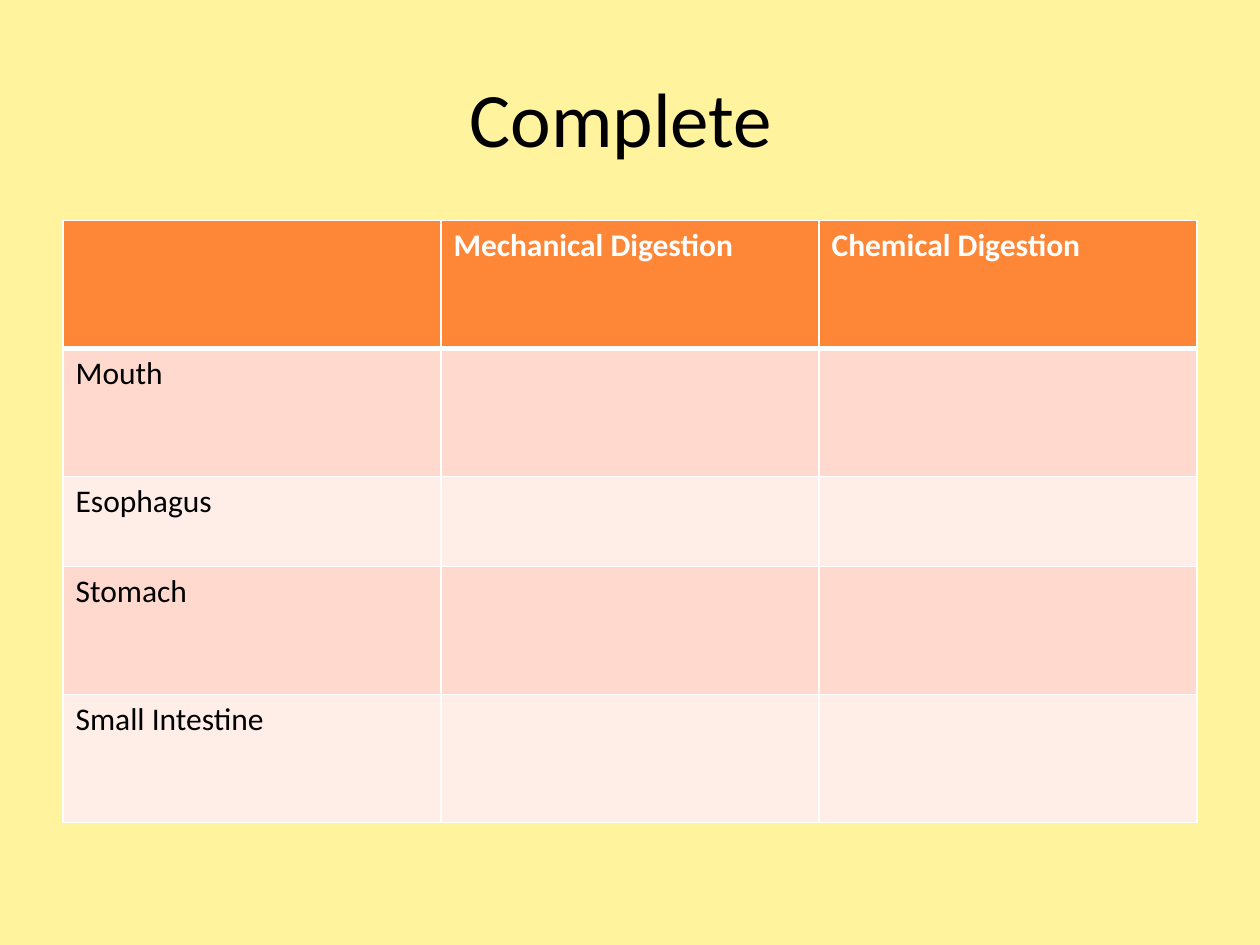
import pptx
import pptx.dml.color
import pptx.enum.text
import pptx.oxml
import pptx.oxml.ns
import pptx.util

Pt = pptx.util.Pt
FONT = "Calibri"
BLACK, WHITE = "000000", "FFFFFF"
HEADER_FILL = "FE8637"
BAND_FILLS = ["FFD9CE", "FFEDE8"]
COLUMN_WIDTH = 216
ROW_HEIGHTS = [73.15, 73.15, 51.4, 73.15, 73.15]
DIGESTION_ROWS = [
    ["", "Mechanical Digestion", "Chemical Digestion"],
    ["Mouth", "", ""],
    ["Esophagus", "", ""],
    ["Stomach", "", ""],
    ["Small Intestine", "", ""],
]


def color(hex_string):
    return pptx.dml.color.RGBColor.from_string(hex_string)


def fill_solid(fill, hex_string):
    fill.solid()
    fill.fore_color.rgb = color(hex_string)


def add_run(paragraph, text, size, hex_string, bold=False):
    run = paragraph.add_run()
    run.text = text
    run.font.name = FONT
    run.font.size = Pt(size)
    run.font.bold = bold
    run.font.color.rgb = color(hex_string)


def add_title(slide, text):
    title = slide.shapes.add_textbox(Pt(36), Pt(21.6), Pt(648), Pt(90))
    frame = title.text_frame
    frame.word_wrap = True
    frame.vertical_anchor = pptx.enum.text.MSO_ANCHOR.MIDDLE
    paragraph = frame.paragraphs[0]
    paragraph.alignment = pptx.enum.text.PP_ALIGN.CENTER
    add_run(paragraph, text, 44, BLACK)


def add_borders(cell, widths):
    """Draw white borders; widths maps a side (L, R, T, B) to points."""
    properties = cell._tc.get_or_add_tcPr()
    for side, width in widths.items():
        properties.append(pptx.oxml.parse_xml(
            f'<a:ln{side} {pptx.oxml.ns.nsdecls("a")} w="{Pt(width)}">'
            f'<a:solidFill><a:srgbClr val="{WHITE}"/></a:solidFill></a:ln{side}>'
        ))


def add_digestion_table(slide):
    table = slide.shapes.add_table(
        len(DIGESTION_ROWS), len(DIGESTION_ROWS[0]), Pt(36), Pt(126),
        Pt(COLUMN_WIDTH * len(DIGESTION_ROWS[0])), Pt(sum(ROW_HEIGHTS)),
    ).table
    table.horz_banding = False
    for column in table.columns:
        column.width = Pt(COLUMN_WIDTH)
    for row_index, texts in enumerate(DIGESTION_ROWS):
        table.rows[row_index].height = Pt(ROW_HEIGHTS[row_index])
        is_header = row_index == 0
        background = HEADER_FILL if is_header else BAND_FILLS[(row_index - 1) % 2]
        widths = {"L": 1, "R": 1, "T": 3 if row_index == 1 else 1,
                  "B": 3 if is_header else 1}
        for column_index, text in enumerate(texts):
            cell = table.cell(row_index, column_index)
            add_borders(cell, widths)
            fill_solid(cell.fill, background)
            if text:
                add_run(cell.text_frame.paragraphs[0], text, 18,
                        WHITE if is_header else BLACK, bold=is_header)


def main():
    presentation = pptx.Presentation()
    presentation.slide_width = Pt(720)
    presentation.slide_height = Pt(540)
    slide = presentation.slides.add_slide(presentation.slide_layouts[6])
    fill_solid(slide.background.fill, "FFF39D")
    add_title(slide, "Complete ")
    add_digestion_table(slide)
    presentation.save("out.pptx")


if __name__ == "__main__":
    main()
